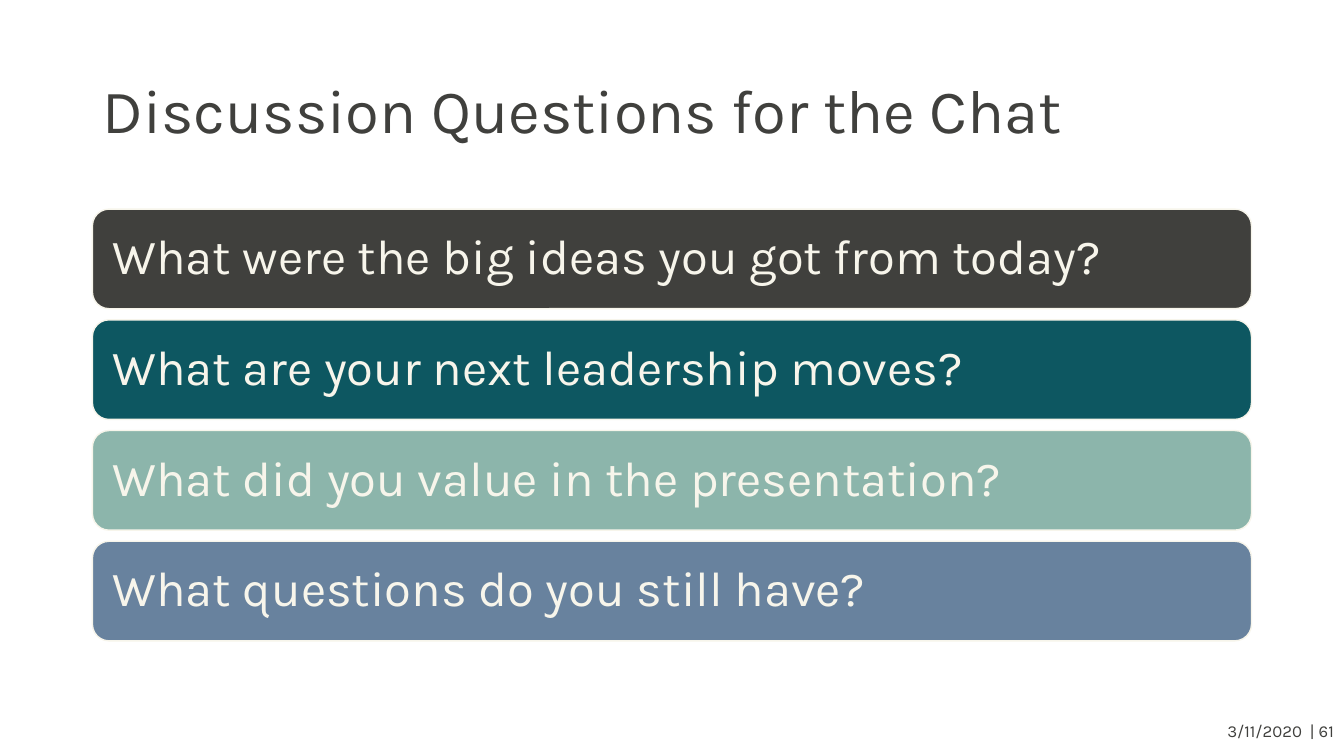
import pptx
import pptx.util
import pptx.dml.color
import pptx.enum.shapes
import pptx.enum.text

Cm = pptx.util.Cm
Pt = pptx.util.Pt
ALIGN = pptx.enum.text.PP_ALIGN
ANCHOR = pptx.enum.text.MSO_ANCHOR

COLORS = {
    "ink": "40403D",
    "cream": "F7F5EB",
    "teal": "0D5761",
    "sage": "8CB5AB",
    "slate": "68829E",
}

QUESTIONS = [
    ("What were the big ideas you got from today?", "ink"),
    ("What are your next leadership moves?", "teal"),
    ("What did you value in the presentation?", "sage"),
    ("What questions do you still have?", "slate"),
]


class Deck:
    font = "Karla"

    def __init__(self, width, height):
        self.prs = pptx.Presentation()
        self.prs.slide_width = Cm(width)
        self.prs.slide_height = Cm(height)
        self.s = None

    def add_slide(self):
        self.s = self.prs.slides.add_slide(self.prs.slide_layouts[5])

    def color(self, name):
        return pptx.dml.color.RGBColor.from_string(COLORS[name])

    def set_text(self, sp, text, size, color, anchor, align=ALIGN.LEFT, spacing=0.9):
        tf = sp.text_frame
        tf.word_wrap = True
        tf.auto_size = pptx.enum.text.MSO_AUTO_SIZE.NONE
        tf.vertical_anchor = anchor
        tf.text = text
        p = tf.paragraphs[0]
        p.alignment = align
        p.line_spacing = spacing
        p.font.name = self.font
        p.font.size = Pt(size)
        p.font.color.rgb = self.color(color)

    def title(self, text, x, y, w, h):
        sp = self.s.shapes.title
        sp.left, sp.top, sp.width, sp.height = Cm(x), Cm(y), Cm(w), Cm(h)
        self.set_text(sp, text, 44, "ink", ANCHOR.MIDDLE)

    def bar(self, text, fill, x, y, w, h):
        sp = self.s.shapes.add_shape(
            pptx.enum.shapes.MSO_SHAPE.ROUNDED_RECTANGLE, Cm(x), Cm(y), Cm(w), Cm(h))
        sp.shadow.inherit = False
        sp.fill.solid()
        sp.fill.fore_color.rgb = self.color(fill)
        sp.line.color.rgb = self.color("cream")
        sp.line.width = Pt(1)
        tf = sp.text_frame
        tf.margin_left = tf.margin_right = Cm(0.38)
        tf.margin_top = tf.margin_bottom = Cm(0.38)
        self.set_text(sp, text, 35, "cream", ANCHOR.MIDDLE)

    def footer(self, text, x, y, w, h):
        sp = self.s.shapes.add_textbox(Cm(x), Cm(y), Cm(w), Cm(h))
        self.set_text(sp, text, 12, "ink", ANCHOR.TOP, ALIGN.RIGHT, 1.0)


def main():
    deck = Deck(33.87, 19.05)
    deck.add_slide()
    left, width = 2.33, 29.21
    deck.title("Discussion Questions for the Chat", left, 1.01, width, 3.68)
    top, pitch, height = 5.27, 2.79, 2.51
    for i, (question, fill) in enumerate(QUESTIONS):
        deck.bar(question, fill, left, top + i * pitch, width, height)
    deck.footer("3/11/2020  | 61", 26.25, 18.03, 7.62, 1.02)
    deck.prs.save("out.pptx")


if __name__ == "__main__":
    main()
